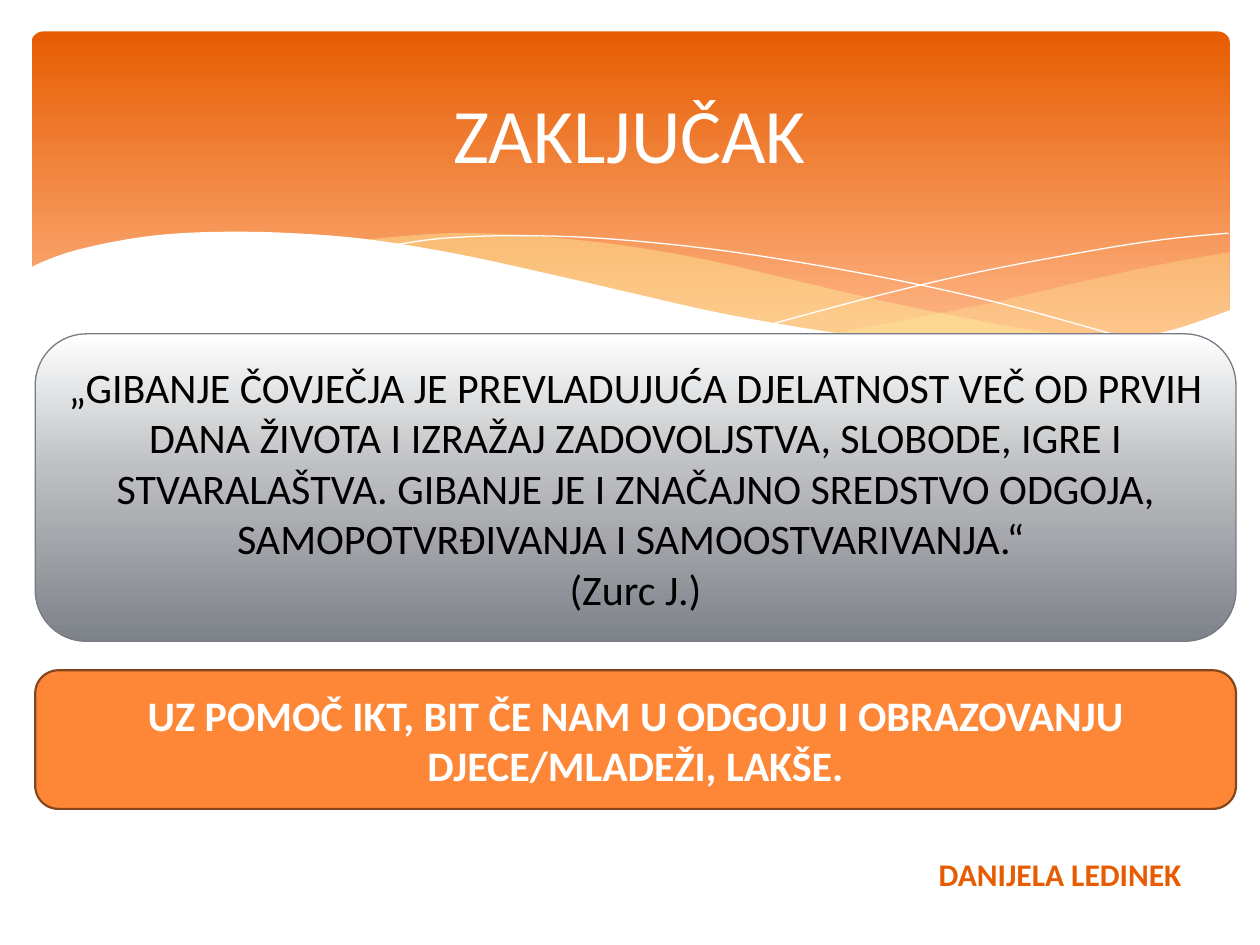
from dataclasses import dataclass

from lxml import etree
from pptx import Presentation
from pptx.dml.color import RGBColor
from pptx.enum import shapes as kinds, text as txt
from pptx.oxml.ns import qn
from pptx.util import Pt

PX = 9144  # 100 px to the inch
FONT = "Calibri"
WHITE, BLACK, ORANGE, CREAM = "FFFFFF", "000000", "E75C01", "FFF39D"

Point = tuple[int, int]
Stop = tuple[int, str]


@dataclass
class Label:
    lines: list[str]
    size: int
    color: str
    bold: bool = False
    wrap: bool = True


@dataclass
class Panel:
    box: tuple[int, int, int, int]
    fill: str | list[Stop]
    round: float = 0.16667
    line: str | None = None
    width: float = 0
    label: Label | None = None


@dataclass
class Wave:
    curves: list[list[Point]]  # smooth curves, joined by straight lines
    fill: str | None = None
    alpha: int = 100


PANELS = {
    "banner": Panel((25, 25, 951, 270), [(0, ORANGE), (90, "FEB687")], 0.034),
    "quote": Panel(
        (28, 265, 953, 244), [(0, WHITE), (44, "BDBFC2"), (100, "7E8289")],
        line="777C84", width=0.75,
        label=Label([
            "„GIBANJE ČOVJEČJA JE PREVLADUJUĆA DJELATNOST VEČ OD PRVIH DANA "
            "ŽIVOTA I IZRAŽAJ ZADOVOLJSTVA, SLOBODE, IGRE I STVARALAŠTVA. "
            "GIBANJE JE I ZNAČAJNO SREDSTVO ODGOJA, SAMOPOTVRĐIVANJA I "
            "SAMOOSTVARIVANJA.“ ",
            "(Zurc J.)",
        ], 24, BLACK)),
    "note": Panel(
        (28, 532, 953, 110), "FE8637", line="85461D", width=1.25,
        label=Label(["UZ POMOČ IKT, BIT ČE NAM U ODGOJU I OBRAZOVANJU "
                     "DJECE/MLADEŽI, LAKŠE."], 24, WHITE, bold=True)),
}

WAVES = [
    # Right ribbon
    Wave([[(976, 200), (921, 210), (861, 223), (779, 242), (661, 265)],
          [(661, 265), (719, 272), (781, 277), (835, 277), (889, 272),
           (935, 262), (976, 247)]], CREAM, 29),
    # Middle ribbon
    Wave([[(893, 273), (807, 260), (706, 240), (629, 222), (555, 205),
           (489, 194), (420, 187), (361, 185), (313, 188), (286, 191)],
          [(286, 191), (362, 203), (449, 222), (530, 240), (618, 258),
           (695, 270), (761, 277), (818, 278), (867, 276), (893, 273)]],
         CREAM, 40),
    # Thin lines
    Wave([[(309, 195), (353, 189), (416, 187), (489, 190), (582, 200),
           (695, 219), (795, 241), (907, 272)]]),
    Wave([[(613, 257), (695, 235), (776, 216), (866, 199), (924, 190),
           (975, 185)]]),
    # White ground below the banner
    Wave([[(977, 246), (930, 262), (875, 273), (809, 277), (744, 274),
           (668, 265), (579, 250), (503, 233), (447, 220), (365, 202),
           (292, 190), (230, 185), (177, 184), (132, 186), (95, 191),
           (59, 199), (36, 207), (23, 213)],
          [(23, 329), (977, 329)]], WHITE),
]


def rgb(color: str) -> RGBColor:
    return RGBColor.from_string(color)


def smooth(knots: list[Point], steps: int = 6) -> list[tuple[float, float]]:
    """Catmull-Rom curve through the knots."""
    ends = [knots[0], *knots, knots[-1]]
    out = [knots[0]]
    for a, b, c, d in zip(ends, ends[1:], ends[2:], ends[3:]):
        for i in range(1, steps + 1):
            t = i / steps
            out.append(tuple(
                (2 * q + (r - p) * t + (2 * p - 5 * q + 4 * r - s) * t**2
                 + (3 * q - p - 3 * r + s) * t**3) / 2
                for p, q, r, s in zip(a, b, c, d)))
    return out


def paint(shape, fill: str | list[Stop] | None) -> None:
    shape.shadow.inherit = False
    if fill is None:
        shape.fill.background()
    elif isinstance(fill, str):
        shape.fill.solid()
        shape.fill.fore_color.rgb = rgb(fill)
    else:
        shape.fill.gradient()
        shape.fill.gradient_angle = 270
        stops = shape.fill._fill._gradFill.find(qn("a:gsLst"))
        for old in list(stops):
            stops.remove(old)
        for pos, color in fill:
            stop = etree.SubElement(stops, qn("a:gs"), pos=str(pos * 1000))
            etree.SubElement(stop, qn("a:srgbClr"), val=color)


def outline(shape, color: str | None, width: float) -> None:
    if color is None:
        shape.line.fill.background()
    else:
        shape.line.color.rgb = rgb(color)
        shape.line.width = Pt(width)


def write(shape, label: Label, anchor=txt.MSO_ANCHOR.MIDDLE) -> None:
    frame = shape.text_frame
    frame.word_wrap = label.wrap
    frame.vertical_anchor = anchor
    style = {"name": FONT, "size": Pt(label.size), "bold": label.bold}
    for i, line in enumerate(label.lines):
        para = frame.add_paragraph() if i else frame.paragraphs[0]
        para.alignment = txt.PP_ALIGN.CENTER
        run = para.add_run()
        run.text = line
        for key, value in style.items():
            setattr(run.font, key, value)
        run.font.color.rgb = rgb(label.color)


def add_panel(slide, panel: Panel) -> None:
    shape = slide.shapes.add_shape(
        kinds.MSO_SHAPE.ROUNDED_RECTANGLE, *(v * PX for v in panel.box))
    shape.adjustments[0] = panel.round
    paint(shape, panel.fill)
    outline(shape, panel.line, panel.width)
    if panel.label:
        write(shape, panel.label)


def add_wave(slide, wave: Wave) -> None:
    points = [(x * PX, y * PX) for curve in wave.curves
              for x, y in (smooth(curve) if len(curve) > 2 else curve)]
    form = slide.shapes.build_freeform(*points[0])
    form.add_line_segments(points[1:], close=wave.fill is not None)
    shape = form.convert_to_shape()
    paint(shape, wave.fill)
    outline(shape, None if wave.fill else WHITE, 0)
    if wave.alpha < 100:
        color = shape.fill._xPr.find(qn("a:solidFill"))[0]
        etree.SubElement(color, qn("a:alpha"), val=str(wave.alpha * 1000))


def add_text(slide, box: tuple[int, int, int, int], label: Label, anchor) -> None:
    write(slide.shapes.add_textbox(*(v * PX for v in box)), label, anchor)


def main() -> None:
    deck = Presentation()
    deck.slide_width, deck.slide_height = 1000 * PX, 750 * PX
    slide = deck.slides.add_slide(deck.slide_layouts[6])

    # Banner with waves
    add_panel(slide, PANELS["banner"])
    for wave in WAVES:
        add_wave(slide, wave)

    # Title, panels and author
    add_text(slide, (50, 37, 900, 137), Label(["ZAKLJUČAK"], 44, WHITE),
             txt.MSO_ANCHOR.MIDDLE)
    add_panel(slide, PANELS["quote"])
    add_text(slide, (728, 674, 227, 40),
             Label(["DANIJELA LEDINEK"], 18, ORANGE, bold=True, wrap=False),
             txt.MSO_ANCHOR.TOP)
    add_panel(slide, PANELS["note"])

    deck.save("out.pptx")


if __name__ == "__main__":
    main()
